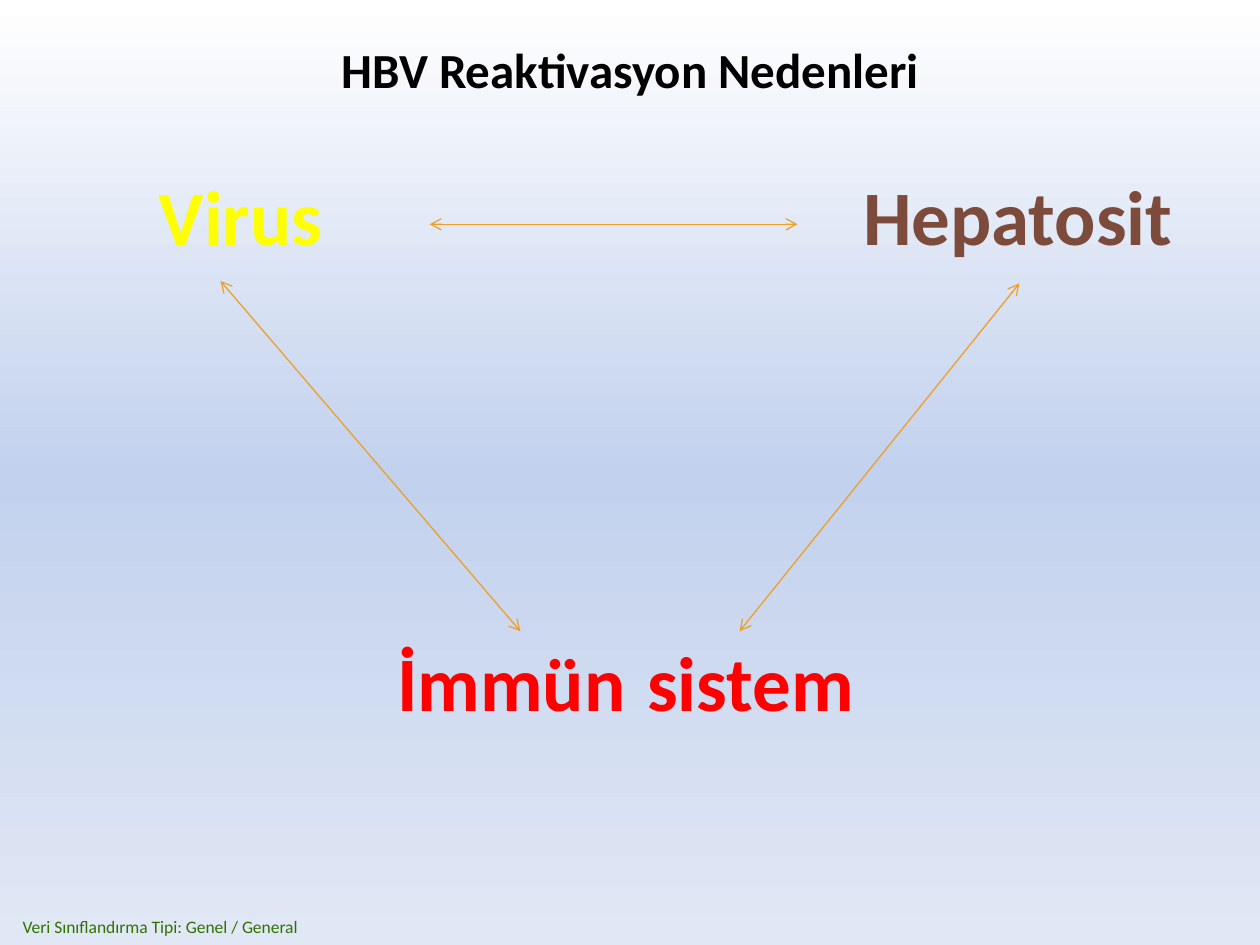
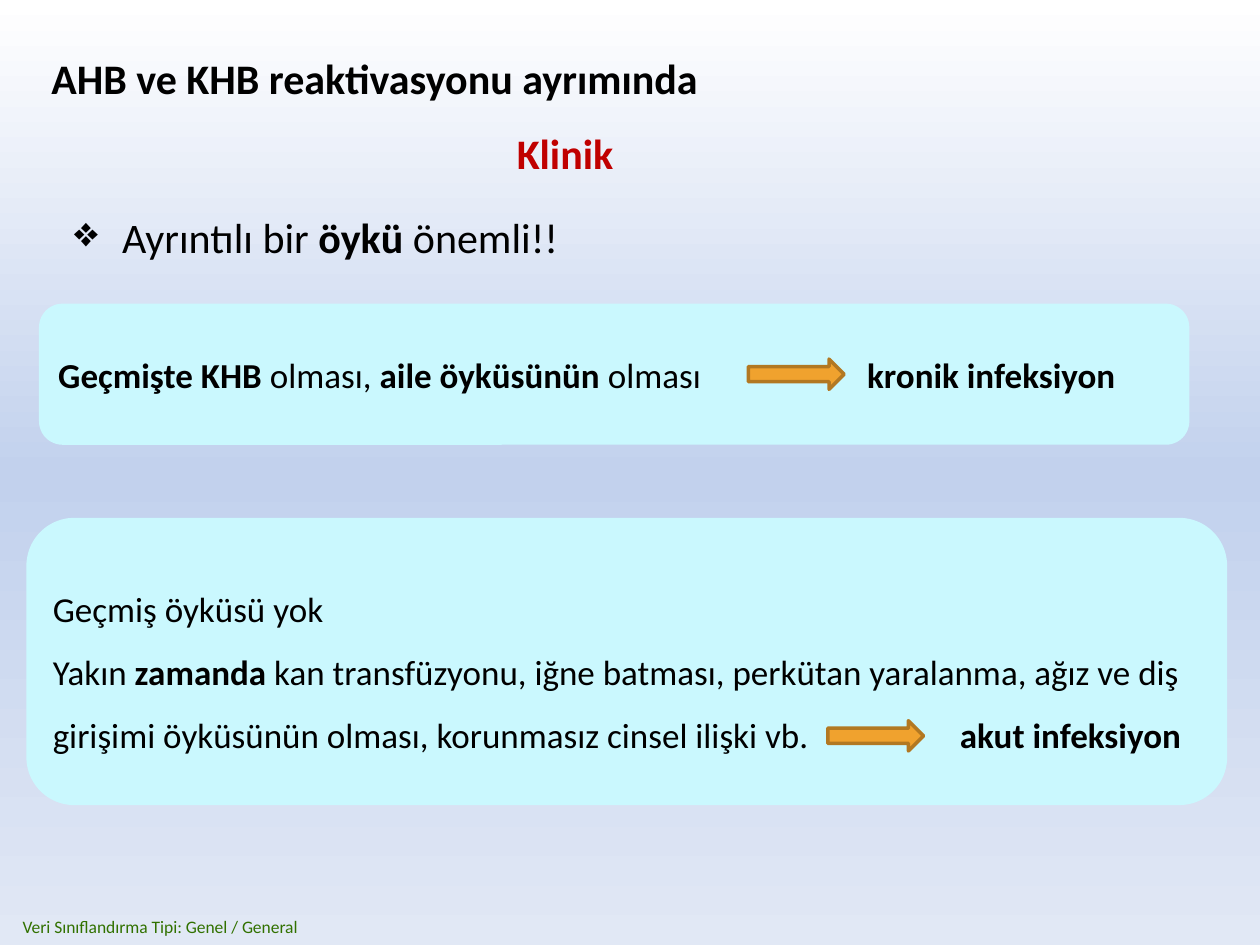
"""Build two slides on the causes and the diagnosis of HBV reactivation."""
from dataclasses import dataclass

from lxml import etree
from pptx import Presentation
from pptx import util as u
from pptx.dml.color import RGBColor
from pptx.enum import shapes, text
from pptx.oxml.ns import qn

FONT = "Calibri"
BLACK = "000000"
DARK_RED = "C00000"
FOOTER_GREEN = "317100"
PANEL_BLUE = "CAF8FE"
LINK_ORANGE = "EF9F28"
ARROW_FILL = "F0A22E"
ARROW_EDGE = "B27822"
BACKGROUND_STOPS = ((0, "FFFFFF"), (50, "C2D1ED"), (100, "E1E8F5"))
FOOTER = "Veri Sınıflandırma Tipi: Genel / General"


@dataclass(frozen=True)
class Box:
    """A place on the slide, in inches."""
    left: float
    top: float
    width: float
    height: float

    def lengths(self) -> tuple:
        """Return the four sides as lengths."""
        return tuple(u.Inches(side) for side in (self.left, self.top, self.width, self.height))


@dataclass(frozen=True)
class Run:
    """A piece of text with its own weight and, if given, size."""
    words: str
    bold: bool = False
    size: float | None = None


@dataclass(frozen=True)
class Factor:
    """One corner of the reactivation triangle."""
    box: Box
    runs: tuple[Run, ...]
    color: str


@dataclass(frozen=True)
class Link:
    """A two-headed line between two factors, in inches."""
    start: tuple[float, float]
    end: tuple[float, float]


@dataclass(frozen=True)
class Finding:
    """A panel of history that points to a diagnosis."""
    box: Box
    paragraphs: tuple[tuple[Run, ...], ...]
    tab: float
    spacing: float
    arrow: Box


FACTORS = (
    Factor(Box(1.16, 1.29, 1.5, 0.84), (Run("Virus", True),), "FFFF00"),
    Factor(Box(6.74, 1.29, 2.68, 0.84), (Run("Hepatosit", True),), "7C4B3B"),
    Factor(Box(3.03, 4.85, 3.87, 1.01),
           (Run("İmmün", True), Run(" ", True, 54), Run("sistem", True)), "FF0000"),
)
LINKS = (
    Link((1.75, 2.23), (4.13, 5.01)),
    Link((6.33, 1.78), (3.41, 1.78)),
    Link((5.87, 5.01), (8.09, 2.25)),
)
FINDINGS = (
    Finding(
        Box(0.31, 2.41, 9.13, 1.12),
        ((Run("Geçmişte KHB ", True), Run("olması, "), Run("aile öyküsünün ", True),
          Run("olması\t"), Run("kronik infeksiyon", True)),),
        6.42, 1.0, Box(5.94, 2.85, 0.76, 0.24)),
    Finding(
        Box(0.21, 4.11, 9.53, 2.28),
        ((Run("Geçmiş öyküsü yok"),),
         (Run("Yakın "), Run("zamanda", True),
          Run(" kan transfüzyonu, iğne batması, perkütan yaralanma, ağız ve diş girişimi "
              "öyküsünün olması, korunmasız cinsel ilişki vb.\t"),
          Run("akut infeksiyon", True))),
        7.2, 1.5, Box(6.57, 5.72, 0.76, 0.24)),
)


def rgb(color: str) -> RGBColor:
    """Turn a hex string into a colour."""
    return RGBColor.from_string(color)


def write(shape, paragraphs, *, size: float, color: str = BLACK, align=text.PP_ALIGN.LEFT,
          anchor=text.MSO_ANCHOR.TOP, wrap: bool = True, spacing: float = 1.0,
          bullet: str = "", tab: float = 0, inset: bool = True) -> None:
    """Fill a shape with paragraphs of runs in one format."""
    frame = shape.text_frame
    frame.word_wrap = wrap
    frame.vertical_anchor = anchor
    if not inset:
        frame.margin_left = frame.margin_right = frame.margin_top = frame.margin_bottom = 0
    for index, runs in enumerate(paragraphs):
        paragraph = frame.add_paragraph() if index else frame.paragraphs[0]
        paragraph.alignment = align
        paragraph.line_spacing = spacing
        properties = paragraph._p.get_or_add_pPr()
        if bullet:
            indent = u.Inches(0.38)
            properties.set("marL", str(indent))
            properties.set("indent", str(-indent))
            etree.SubElement(properties, qn("a:buChar"), char=bullet)
        if tab:
            tabs = etree.SubElement(properties, qn("a:tabLst"))
            etree.SubElement(tabs, qn("a:tab"), pos=str(u.Inches(tab)), algn="l")
        for piece in runs:
            run = paragraph.add_run()
            run.text = piece.words
            run.font.name = FONT
            run.font.size = u.Pt(piece.size or size)
            run.font.bold = piece.bold
            run.font.color.rgb = rgb(color)


def add_text(slide, box: Box, *runs: Run, **style) -> None:
    """Add a text box holding one paragraph."""
    write(slide.shapes.add_textbox(*box.lengths()), [runs], **style)


def add_shape(slide, kind, box: Box, fill: str, edge: str = ""):
    """Add a flat preset shape, outlined if an edge colour is given."""
    shape = slide.shapes.add_shape(kind, *box.lengths())
    shape.shadow.inherit = False
    shape.fill.solid()
    shape.fill.fore_color.rgb = rgb(fill)
    if edge:
        shape.line.color.rgb = rgb(edge)
        shape.line.width = u.Pt(2)
    else:
        shape.line.fill.background()
    return shape


def add_link(slide, link: Link) -> None:
    """Draw a thin line with an open arrowhead at both ends."""
    points = (u.Inches(value) for value in (*link.start, *link.end))
    connector = slide.shapes.add_connector(shapes.MSO_CONNECTOR.STRAIGHT, *points)
    connector.line.color.rgb = rgb(LINK_ORANGE)
    connector.line.width = u.Pt(0.75)
    line = connector.line._get_or_add_ln()
    for end in ("a:headEnd", "a:tailEnd"):
        etree.SubElement(line, qn(end), type="arrow")
    etree.SubElement(connector._element.spPr, qn("a:effectLst"))


def add_slide(presentation):
    """Add a blank slide with the shared background and footer."""
    slide = presentation.slides.add_slide(presentation.slide_layouts[6])
    fill = slide.background.fill
    fill.gradient()
    fill.gradient_angle = 270
    stops = next(slide._element.iter(qn("a:gsLst")))
    for stop in list(stops):
        stops.remove(stop)
    for position, color in BACKGROUND_STOPS:
        stop = etree.SubElement(stops, qn("a:gs"), pos=str(position * 1000))
        etree.SubElement(stop, qn("a:srgbClr"), val=color)
    add_text(slide, Box(0.18, 7.21, 2.37, 0.29), Run(FOOTER), size=10, color=FOOTER_GREEN,
             anchor=text.MSO_ANCHOR.MIDDLE, inset=False)
    return slide


def add_title(slide, box: Box, words: str, size: float, color: str = BLACK) -> None:
    """Add a bold centred title."""
    add_text(slide, box, Run(words, True), size=size, color=color,
             align=text.PP_ALIGN.CENTER, anchor=text.MSO_ANCHOR.MIDDLE)


def build_causes(presentation) -> None:
    """Draw the triangle of reactivation causes."""
    slide = add_slide(presentation)
    add_title(slide, Box(0.5, 0.3, 9, 0.5), "HBV Reaktivasyon Nedenleri", 28)
    for factor in FACTORS:
        add_text(slide, factor.box, *factor.runs, size=44, color=factor.color,
                 align=text.PP_ALIGN.CENTER, wrap=False)
    for link in LINKS:
        add_link(slide, link)


def build_clinic(presentation) -> None:
    """Draw the clinical findings that separate acute from chronic infection."""
    slide = add_slide(presentation)
    add_text(slide, Box(0.31, 0.37, 7.07, 0.51),
             Run("AHB ve KHB reaktivasyonu ayrımında", True), size=24)
    add_title(slide, Box(2.48, 0.94, 4.01, 0.55), "Klinik", 24, DARK_RED)
    add_text(slide, Box(0.49, 1.63, 4.49, 0.79), Run("Ayrıntılı bir "), Run("öykü", True),
             Run(" önemli!!"), size=24, bullet="❖")
    for finding in FINDINGS:
        panel = add_shape(slide, shapes.MSO_SHAPE.ROUNDED_RECTANGLE, finding.box, PANEL_BLUE)
        write(panel, finding.paragraphs, size=20, anchor=text.MSO_ANCHOR.MIDDLE,
              spacing=finding.spacing, tab=finding.tab)
        add_shape(slide, shapes.MSO_SHAPE.RIGHT_ARROW, finding.arrow, ARROW_FILL, ARROW_EDGE)


def main() -> None:
    """Build and save the presentation."""
    presentation = Presentation()
    presentation.slide_width = u.Inches(10)
    presentation.slide_height = u.Inches(7.5)
    build_causes(presentation)
    build_clinic(presentation)
    presentation.save("out.pptx")


if __name__ == "__main__":
    main()
